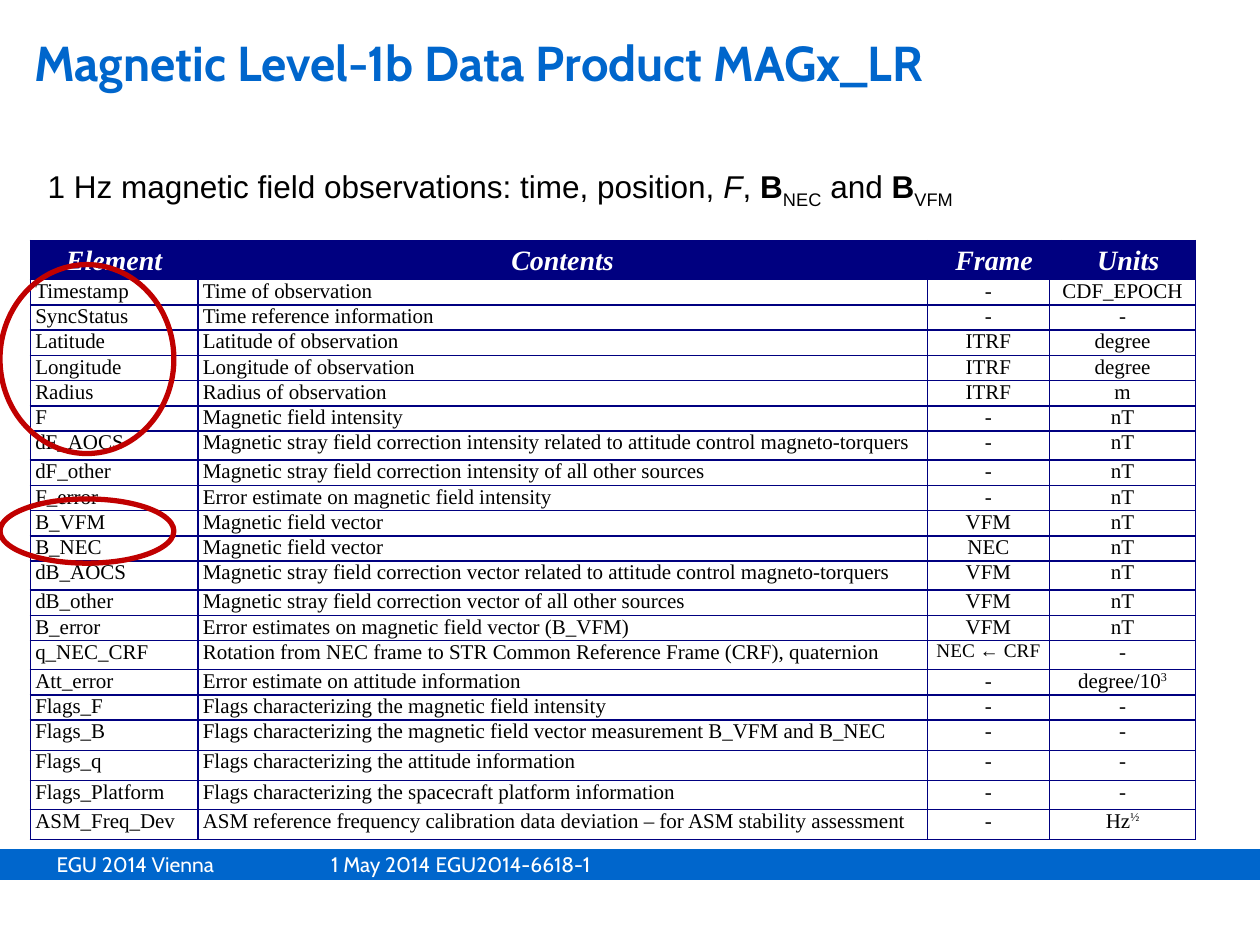
from dataclasses import dataclass

from lxml import etree
from pptx import Presentation
from pptx import util as u
from pptx.dml.color import RGBColor
from pptx.enum import shapes, text
from pptx.oxml.ns import qn

CENTER, LEFT = text.PP_ALIGN.CENTER, text.PP_ALIGN.LEFT
STRAY = "Magnetic stray field correction"

HEADER = ("Element", "Contents", "Frame", "Units")
ROWS = [
    ("Timestamp", "Time of observation", "-", "CDF_EPOCH"),
    ("SyncStatus", "Time reference information", "-", "-"),
    ("Latitude", "Latitude of observation", "ITRF", "degree"),
    ("Longitude", "Longitude of observation", "ITRF", "degree"),
    ("Radius", "Radius of observation", "ITRF", "m"),
    ("F", "Magnetic field intensity", "-", "nT"),
    ("dF_AOCS", f"{STRAY} intensity related to attitude control magneto-torquers", "-", "nT"),
    ("dF_other", f"{STRAY} intensity of all other sources", "-", "nT"),
    ("F_error", "Error estimate on magnetic field intensity", "-", "nT"),
    ("B_VFM", "Magnetic field vector", "VFM", "nT"),
    ("B_NEC", "Magnetic field vector", "NEC", "nT"),
    ("dB_AOCS", f"{STRAY} vector related to attitude control magneto-torquers", "VFM", "nT"),
    ("dB_other", f"{STRAY} vector of all other sources", "VFM", "nT"),
    ("B_error", "Error estimates on magnetic field vector (B_VFM)", "VFM", "nT"),
    ("q_NEC_CRF", "Rotation from NEC frame to STR Common Reference Frame (CRF), quaternion",
     [("NEC ← CRF", {"size": u.Pt(11)})], "-"),
    ("Att_error", "Error estimate on attitude information", "-",
     [("degree/10", {}), ("3", {"baseline": 30})]),
    ("Flags_F", "Flags characterizing the magnetic field intensity", "-", "-"),
    ("Flags_B", "Flags characterizing the magnetic field vector measurement B_VFM and B_NEC",
     "-", "-"),
    ("Flags_q", "Flags characterizing the attitude information", "-", "-"),
    ("Flags_Platform", "Flags characterizing the spacecraft platform information", "-", "-"),
    ("ASM_Freq_Dev",
     "ASM reference frequency calibration data deviation – for ASM stability assessment",
     "-", [("Hz", {}), ("½", {"baseline": 30})]),
]
COLUMN_WIDTHS = (1.33, 5.79, 0.97, 0.09, 1.07)
HEADER_HEIGHT, ROW_HEIGHT = 0.31, 0.2
TALL_ROWS = {7: 0.23, 12: 0.23, 15: 0.23, 18: 0.24, 19: 0.24, 20: 0.23, 21: 0.24}


@dataclass(frozen=True)
class Theme:
    blue: str = "0066CC"
    navy: str = "000080"
    red: str = "C00000"
    black: str = "000000"
    white: str = "FFFFFF"
    title_font: str = "Cabin"
    text_font: str = "Arial"
    table_font: str = "Times New Roman"
    title_size: int = 28
    text_size: int = 18
    header_size: int = 16
    small_size: int = 12


def apply(obj, values):
    for name, value in values.items():
        setattr(obj, name, value)


def box(left, top, width, height):
    return [u.Inches(v) for v in (left, top, width, height)]


class SlideBuilder:
    def __init__(self, prs, theme):
        self.theme = theme
        self.s = prs.slides.add_slide(prs.slide_layouts[5])

    def font(self, name, size, color, **extra):
        return {"name": name, "size": u.Pt(size), "color": color, **extra}

    def add_runs(self, p, content, fmt):
        """Add runs to p; content is a string or a list of (text, own format)."""
        runs = [(content, {})] if isinstance(content, str) else content
        for words, own in runs:
            r = p.add_run()
            r.text = words
            values = {**fmt, **own}
            r.font.color.rgb = RGBColor.from_string(values.pop("color"))
            baseline = values.pop("baseline", 0)
            apply(r.font, values)
            if baseline:
                r._r.get_or_add_rPr().set("baseline", str(baseline * 1000))

    def title(self, content, place):
        sp, t = self.s.shapes.title, self.theme
        apply(sp, dict(zip(("left", "top", "width", "height"), box(*place))))
        tf = sp.text_frame
        apply(tf, {"margin_left": 0, "margin_right": 0, "word_wrap": True,
                   "vertical_anchor": text.MSO_ANCHOR.TOP,
                   "auto_size": text.MSO_AUTO_SIZE.NONE})
        p = tf.paragraphs[0]
        p.alignment = LEFT
        self.add_runs(p, content, self.font(t.title_font, t.title_size, t.blue, bold=True))

    def text_box(self, content, place, fmt, anchor=text.MSO_ANCHOR.TOP, tabs=()):
        tf = self.s.shapes.add_textbox(*box(*place)).text_frame
        apply(tf, {"word_wrap": True, "vertical_anchor": anchor})
        p = tf.paragraphs[0]
        if tabs:
            tab_list = etree.SubElement(p._p.get_or_add_pPr(), qn("a:tabLst"))
            for pos in tabs:
                etree.SubElement(tab_list, qn("a:tab"), pos=str(u.Inches(pos)), algn="l")
        self.add_runs(p, content, fmt)

    def shape(self, kind, place, line, weight, fill=None):
        sp = self.s.shapes.add_shape(kind, *box(*place))
        sp.shadow.inherit = False
        if fill:
            sp.fill.solid()
            sp.fill.fore_color.rgb = RGBColor.from_string(fill)
        else:
            sp.fill.background()
        sp.line.color.rgb = RGBColor.from_string(line)
        sp.line.width = u.Pt(weight)

    def borders(self, cell):
        tc_pr = cell._tc.get_or_add_tcPr()
        for side in ("lnL", "lnR", "lnT", "lnB"):
            ln = etree.SubElement(tc_pr, qn(f"a:{side}"), w=str(u.Pt(1)))
            fill = etree.SubElement(ln, qn("a:solidFill"))
            etree.SubElement(fill, qn("a:srgbClr"), val=self.theme.navy)

    def cell(self, cell, content, fmt, paragraph):
        apply(cell, {"margin_left": u.Inches(0.04), "margin_right": u.Inches(0.04),
                     "margin_top": 0, "margin_bottom": 0})
        p = cell.text_frame.paragraphs[0]
        apply(p, paragraph)
        self.add_runs(p, content, fmt)

    def table(self, left, top):
        """Frame heading spans the narrow column; in the body, units span it."""
        t = self.theme
        heights = [HEADER_HEIGHT] + [TALL_ROWS.get(i, ROW_HEIGHT)
                                     for i in range(1, len(ROWS) + 1)]
        place = box(left, top, sum(COLUMN_WIDTHS), sum(heights))
        tbl = self.s.shapes.add_table(len(heights), len(COLUMN_WIDTHS), *place).table
        apply(tbl, {"first_row": False, "horz_banding": False})
        for col, width in zip(tbl.columns, COLUMN_WIDTHS):
            col.width = u.Inches(width)
        for row, height in zip(tbl.rows, heights):
            row.height = u.Inches(height)

        head = self.font(t.table_font, t.header_size, t.white, bold=True, italic=True)
        body = self.font(t.table_font, t.small_size, t.black)
        for i, values in enumerate([HEADER, *ROWS]):
            for c in tbl.rows[i].cells:
                self.borders(c)
                if i == 0:
                    c.fill.solid()
                    c.fill.fore_color.rgb = RGBColor.from_string(t.navy)
                else:
                    c.fill.background()
            first, columns = (2, (0, 1, 2, 4)) if i == 0 else (3, (0, 1, 2, 3))
            tbl.cell(i, first).merge(tbl.cell(i, first + 1))
            for j, content in zip(columns, values):
                paragraph = {"alignment": CENTER if i == 0 or j > 1 else LEFT}
                if i == 0:
                    paragraph.update(line_spacing=1.15, space_after=u.Pt(10))
                self.cell(tbl.cell(i, j), content, body if i else head, paragraph)


def main():
    prs = Presentation()
    prs.slide_width, prs.slide_height = u.Inches(10), u.Inches(7.5)
    t = Theme()
    b = SlideBuilder(prs, t)

    b.shape(shapes.MSO_SHAPE.RECTANGLE, (0, 6.74, 10, 0.24), t.blue, 0.75, fill=t.blue)
    b.text_box("EGU 2014 Vienna\t1 May 2014\tEGU2014-6618-1", (0.35, 6.71, 9.29, 0.36),
               b.font(t.title_font, t.small_size, t.white), tabs=(2.18, 3.01))
    b.title("Magnetic Level-1b Data Product MAGx_LR", (0.27, 0.21, 9.45, 0.76))

    subscript = {"baseline": -25}
    observations = [
        ("1 Hz magnetic field observations: time, position, ", {}),
        ("F", {"italic": True}), (", ", {}),
        ("B", {"bold": True}), ("NEC", subscript), (" and ", {}),
        ("B", {"bold": True}), ("VFM", subscript),
    ]
    b.text_box(observations, (0.28, 1.3, 7.9, 0.4),
               b.font(t.text_font, t.text_size, t.black), text.MSO_ANCHOR.MIDDLE)
    b.table(0.24, 1.91)
    for top, height in ((2.1, 1.5), (3.96, 0.51)):
        b.shape(shapes.MSO_SHAPE.OVAL, (0, top, 1.38, height), t.red, 3)
    prs.save("out.pptx")


if __name__ == "__main__":
    main()
